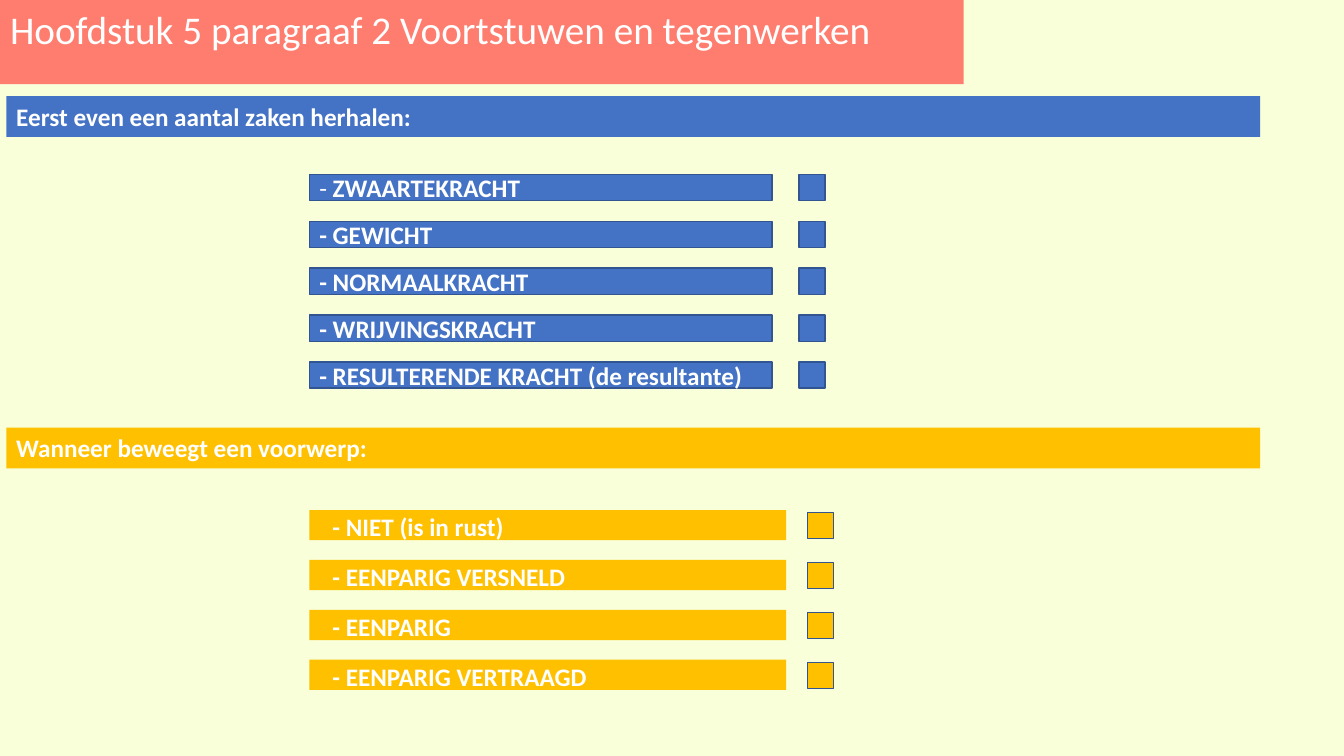
from dataclasses import dataclass

from pptx import Presentation
from pptx import util as u
from pptx.dml.color import RGBColor
from pptx.enum import shapes, text

SLIDE_W, SLIDE_H = u.Inches(13.333), u.Inches(7.5)
FONT = "Calibri"
COLOURS = {
    "background": "F8FFD9",
    "title": "FF7D6F",
    "blue": "4472C4",
    "yellow": "FFC000",
    "outline": "325491",
    "text": "FFFFFF",
}


@dataclass(frozen=True)
class Area:
    """Place and size as percentages of the slide's width and height."""
    left: float
    top: float
    width: float
    height: float

    def emu(self) -> tuple[int, int, int, int]:
        return (int(SLIDE_W * self.left / 100), int(SLIDE_H * self.top / 100),
                int(SLIDE_W * self.width / 100), int(SLIDE_H * self.height / 100))


@dataclass(frozen=True)
class Term:
    label: str
    width: float
    bold_dash: bool = True


@dataclass(frozen=True)
class Section:
    heading: str
    colour: str
    heading_top: float
    first_bar: Area
    pitch: float
    outlined_bars: bool
    label_left: float
    label_shift: float
    box_left: float
    box_shift: float
    terms: tuple[Term, ...]


HEADING_LEFT, HEADING_WIDTH, LABEL_HEIGHT = 0.47, 93.3, 5.38
BOX_WIDTH, BOX_HEIGHT = 1.95, 3.47
TITLE = "Hoofdstuk 5 paragraaf 2 Voortstuwen en tegenwerken"
SECTIONS = (
    Section("Eerst even een aantal zaken herhalen:", "blue", 12.72,
            Area(23.02, 23.07, 34.42, 3.47), 6.2, True, 23.02, -0.87, 59.44, 0, (
                Term("ZWAARTEKRACHT", 16.58, bold_dash=False),
                Term("GEWICHT", 9.9),
                Term("NORMAALKRACHT", 17.25),
                Term("WRIJVINGSKRACHT", 17.78),
                Term("RESULTERENDE KRACHT (de resultante)", 33.23))),
    Section("Wanneer beweegt een voorwerp:", "yellow", 56.58,
            Area(23.02, 67.47, 35.48, 4), 6.6, False, 24, -0.47, 60.08, 0.33, (
                Term("NIET (is in rust)", 14.4),
                Term("EENPARIG VERSNELD", 18.98),
                Term("EENPARIG", 10.43),
                Term("EENPARIG VERTRAAGD", 20.63))),
)


def rgb(name: str) -> RGBColor:
    return RGBColor.from_string(COLOURS[name])


def add_rectangle(slide, area: Area, colour: str, outlined: bool = False):
    rectangle = slide.shapes.add_shape(shapes.MSO_SHAPE.RECTANGLE, *area.emu())
    rectangle.shadow.inherit = False
    rectangle.fill.solid()
    rectangle.fill.fore_color.rgb = rgb(colour)
    if outlined:
        rectangle.line.color.rgb = rgb("outline")
        rectangle.line.width = u.Pt(1)
    else:
        rectangle.line.fill.background()
    return rectangle


def write(frame, runs: list[tuple[str, bool]], size: int, wrap: bool = True) -> None:
    """Fill the frame with one left-aligned line of (wording, bold) runs."""
    frame.word_wrap = wrap
    frame.auto_size = text.MSO_AUTO_SIZE.SHAPE_TO_FIT_TEXT
    frame.vertical_anchor = text.MSO_ANCHOR.TOP
    line = frame.paragraphs[0]
    line.alignment = text.PP_ALIGN.LEFT
    for wording, bold in runs:
        run = line.add_run()
        run.text = wording
        run.font.name = FONT
        run.font.size = u.Pt(size)
        run.font.bold = bold
        run.font.color.rgb = rgb("text")


def add_title(slide) -> None:
    title = slide.shapes.title
    title.left, title.top, title.width, title.height = Area(0, 0, 71.7, 7.63).emu()
    title.fill.solid()
    title.fill.fore_color.rgb = rgb("title")
    write(title.text_frame, [(TITLE, False)], 28)


def add_section(slide, section: Section) -> None:
    heading = add_rectangle(
        slide, Area(HEADING_LEFT, section.heading_top, HEADING_WIDTH, LABEL_HEIGHT),
        section.colour)
    write(heading.text_frame, [(section.heading, True)], 18)

    bar = section.first_bar
    for row, term in enumerate(section.terms):
        top = bar.top + row * section.pitch
        add_rectangle(slide, Area(bar.left, top, bar.width, bar.height),
                      section.colour, section.outlined_bars)
        label = slide.shapes.add_textbox(
            *Area(section.label_left, top + section.label_shift,
                  term.width, LABEL_HEIGHT).emu())
        runs = ([("- " + term.label, True)] if term.bold_dash
                else [("- ", False), (term.label, True)])
        write(label.text_frame, runs, 18, wrap=False)
        add_rectangle(slide, Area(section.box_left, top + section.box_shift,
                                  BOX_WIDTH, BOX_HEIGHT), section.colour, outlined=True)


def main() -> None:
    deck = Presentation()
    deck.slide_width, deck.slide_height = SLIDE_W, SLIDE_H
    slide = deck.slides.add_slide(deck.slide_layouts.get_by_name("Title Only"))
    slide.background.fill.solid()
    slide.background.fill.fore_color.rgb = rgb("background")
    add_title(slide)
    for section in SECTIONS:
        add_section(slide, section)
    deck.save("out.pptx")


if __name__ == "__main__":
    main()
